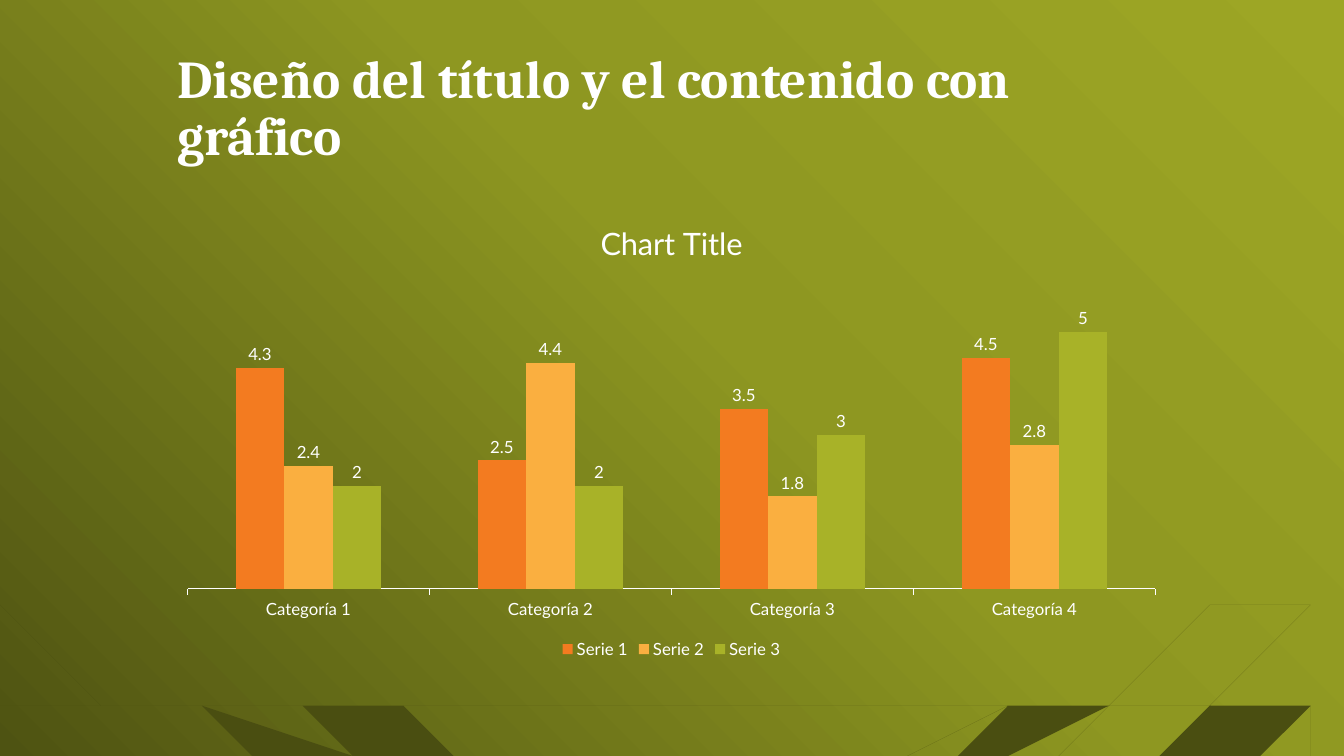
from copy import deepcopy

from pptx import Presentation
from pptx import util as u
from pptx.chart import data
from pptx.dml import color
from pptx.enum import chart as ch
from pptx.enum import text

WIDE, HIGH = 13.34, 7.5
LEFT, SPAN = 1.66, 10
WHITE, WAVE = "FFFFFF", "4A4E11"
BACKDROP = [(0, "9DA625"), (0.45, "8E9721"), (1, "4E5312")]
CATEGORIES = [f"Categoría {n}" for n in range(1, 5)]
SERIES = [
    ("Serie 1", "F37B20", (4.3, 2.5, 3.5, 4.5)),
    ("Serie 2", "FAAF40", (2.4, 4.4, 1.8, 2.8)),
    ("Serie 3", "A8B228", (2, 2, 3, 5)),
]
LONG_STRANDS = [
    ((2.4, 7.11), (6, 7.6), (9.8, 7.08), (WIDE, 6.04)),
    ((2.76, 7.16), (6.31, 7.65), (9.99, 7.13), (WIDE, 6.17)),
    ((2.58, 7.14), (6.18, 7.75), (9.93, 7.27), (WIDE, 6.31)),
    ((2.45, 7.13), (6.08, 7.83), (9.89, 7.38), (WIDE, 6.43)),
]
RIGHT_STRANDS = [(6.57, 7.89), (6.7, 9.07), (6.85, 10), (6.96, 10.65),
                 (7.09, 11.36), (7.22, 12.03), (7.35, 12.65)]
LEFT_STRANDS = [(6.43, 0.9, 6.72), (6.48, 1, 6.77), (6.55, 1.1, 6.81),
                (6.61, 1.25, 6.88), (6.67, 1.35, 6.92), (6.75, 1.47, 6.96)]
LOWER_STRANDS = [(2.28, 7.11, 4.9), (2.21, 7.1, 4.36), (2.61, 7.2, 4.02)]


def rgb(value):
    return color.RGBColor.from_string(value)


def style(font, size, name="Lato", bold=False):
    font.size, font.name, font.bold = u.Pt(size), name, bold
    font.color.rgb = rgb(WHITE)


def curve(a, b, c, d, steps):
    points = []
    for step in range(steps + 1):
        t = step / steps
        s = 1 - t
        points.append(tuple(s**3 * p + 3 * s * s * t * q + 3 * s * t * t * r + t**3 * e
                            for p, q, r, e in zip(a, b, c, d)))
    return points


def bow(start, end, near, far, steps):
    (x, y), (x2, y2) = start, end
    dx, dy = x2 - x, y2 - y
    return curve(start, (x + dx / 3, y + near * dy),
                 (x + dx * 2 / 3, y + far * dy), end, steps)


def ribbon(upper, lower):
    return upper + lower[::-1]


def lowered(points, gap):
    return [(x, y + gap) for x, y in points]


def wave_outlines():
    crest = curve((0, 6.26), (0.8, 6.64), (1.6, 6.94), (2.4, 7.11), 4)
    trough = [(0, 6.4), (1.47, 6.96), (2.25, 7.25), (3.08, HIGH)]
    outlines = [ribbon(crest + [(3.8, HIGH)], trough)]
    for points in LONG_STRANDS:
        upper = curve(*points, 10)
        outlines.append(ribbon(upper, lowered(upper, 0.01)))
    for y, x in RIGHT_STRANDS:
        upper = bow((WIDE, y), (x, HIGH), 0.46, 0.83, 3)
        lower = bow((WIDE, y + 0.03), (x + 0.17, HIGH), 0.46, 0.83, 3)
        outlines.append(ribbon(upper, lower))
    for y, x2, y2 in LEFT_STRANDS:
        upper = bow((0, y), (x2, y2), 0.32, 0.65, 2)
        outlines.append(ribbon(upper, lowered(upper, 0.01)))
    for x, y, x2 in LOWER_STRANDS:
        upper = bow((x, y), (x2, HIGH), 0.42, 0.76, 2)
        outlines.append(upper + [(x2 + 0.12, HIGH)])
    return outlines


def paint_background(page):
    fill = page.background.fill
    fill.gradient()
    fill.gradient_angle = 225
    stop_list = next(page.element.iter("{*}gsLst"))
    stop_list.append(deepcopy(stop_list[-1]))
    for stop, (position, value) in zip(fill.gradient_stops, BACKDROP):
        stop.position = position
        stop.color.rgb = rgb(value)


def draw_waves(page):
    first, *others = wave_outlines()
    builder = page.shapes.build_freeform(*first[0], scale=u.Inches(1))
    builder.add_line_segments(first[1:], close=True)
    for outline in others:
        builder.move_to(*outline[0])
        builder.add_line_segments(outline[1:], close=True)
    waves = builder.convert_to_shape()
    waves.shadow.inherit = False
    waves.fill.solid()
    waves.fill.fore_color.rgb = rgb(WAVE)
    waves.line.fill.background()


def place_title(page, box):
    title = page.shapes.title
    title.left, title.top, title.width, title.height = map(u.Inches, box)
    frame = title.text_frame
    frame.word_wrap = True
    frame.auto_size = text.MSO_AUTO_SIZE.NONE
    frame.vertical_anchor = text.MSO_ANCHOR.BOTTOM
    para = frame.paragraphs[0]
    para.alignment = text.PP_ALIGN.LEFT
    para.line_spacing = 0.9
    span = para.add_run()
    span.text = "Diseño del título y el contenido con gráfico"
    style(span.font, 38, "Cambria", True)


def place_chart(page, box):
    table = data.CategoryChartData()
    table.categories = CATEGORIES
    for name, _, values in SERIES:
        table.add_series(name, values)
    chart = page.shapes.add_chart(
        ch.XL_CHART_TYPE.COLUMN_CLUSTERED, *map(u.Inches, box), table).chart
    style(chart.font, 10)
    chart.has_title = True
    span = chart.chart_title.text_frame.paragraphs[0].add_run()
    span.text = "Chart Title"
    style(span.font, 22)
    chart.chart_title.include_in_layout = False
    chart.has_legend = True
    chart.legend.position = ch.XL_LEGEND_POSITION.BOTTOM
    chart.legend.include_in_layout = False
    style(chart.legend.font, 12)

    categories = chart.category_axis
    categories.major_tick_mark = ch.XL_TICK_MARK.OUTSIDE
    categories.has_major_gridlines = False
    categories.format.line.color.rgb = rgb(WHITE)
    categories.format.line.width = u.Pt(0.75)
    style(categories.tick_labels.font, 12)
    values = chart.value_axis
    values.has_major_gridlines = False
    values.minimum_scale, values.maximum_scale = 0, 6
    values.visible = False

    plot = chart.plots[0]
    plot.gap_width, plot.overlap = 199, 0
    plot.vary_by_categories = False
    for series, (_, value, _) in zip(plot.series, SERIES):
        series.format.fill.solid()
        series.format.fill.fore_color.rgb = rgb(value)
        labels = series.data_labels
        labels.show_value = True
        labels.position = ch.XL_LABEL_POSITION.OUTSIDE_END
        style(labels.font, 12)


def main():
    deck = Presentation()
    deck.slide_width, deck.slide_height = u.Inches(13.33), u.Inches(HIGH)
    page = deck.slides.add_slide(deck.slide_layouts[5])
    paint_background(page)
    draw_waves(page)
    place_title(page, (LEFT, 0.44, SPAN, 1.27))
    place_chart(page, (LEFT, 2, SPAN, 4.58))
    deck.save("out.pptx")


if __name__ == "__main__":
    main()
